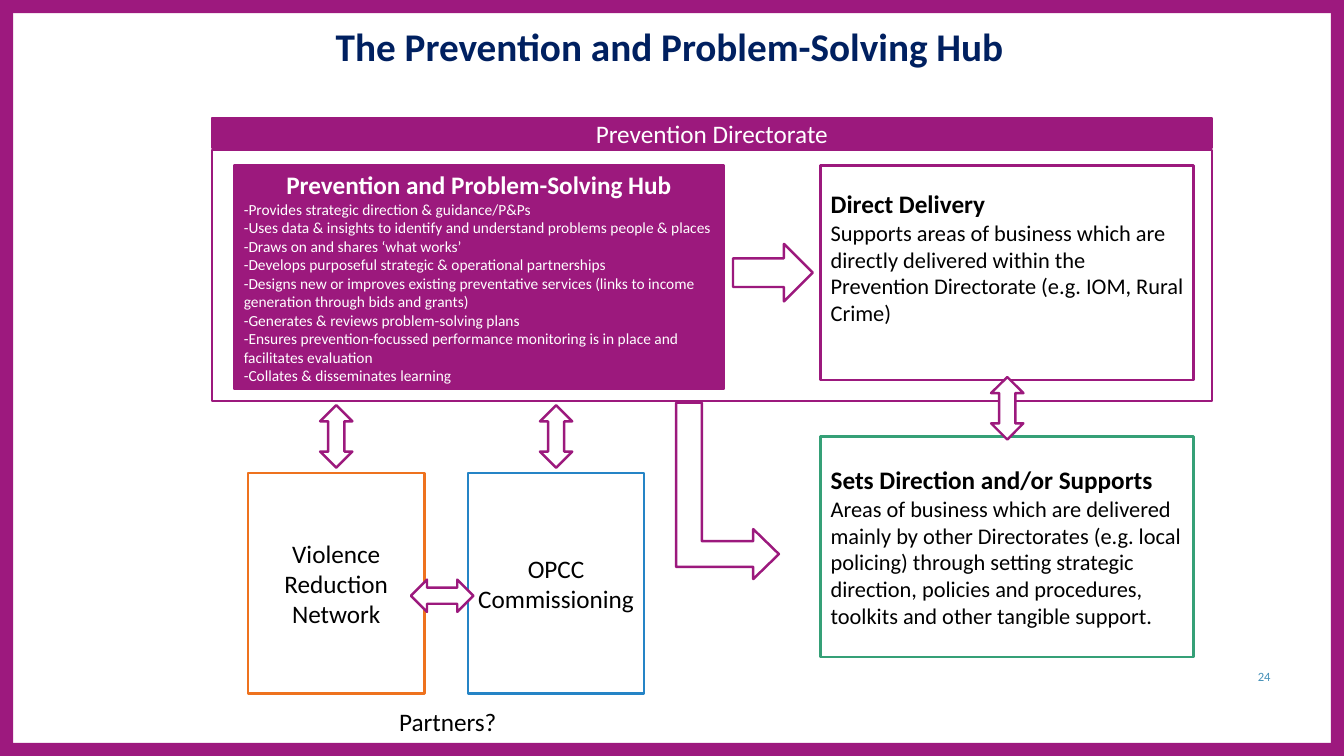
import pptx
import pptx.util
import pptx.dml.color
import pptx.enum.shapes
import pptx.enum.text

Inches = pptx.util.Inches
Pt = pptx.util.Pt
SHAPE = pptx.enum.shapes.MSO_SHAPE
ALIGN = pptx.enum.text.PP_ALIGN
ANCHOR = pptx.enum.text.MSO_ANCHOR

WIDE, HIGH = 13.33, 7.5
PURPLE, WHITE, BLACK = "9C197D", "FFFFFF", "000000"
NAVY, BLUE, TEAL = "002060", "2584C6", "35A077"
ORANGE, EDGE, PALE = "EE721E", "9D197E", "4590B8"

DUTIES = [
    "-Provides strategic direction & guidance/P&Ps",
    "-Uses data & insights to identify and understand problems people & places",
    "-Draws on and shares ‘what works’",
    "-Develops purposeful strategic & operational partnerships",
    "-Designs new or improves existing preventative services (links to income "
    "generation through bids and grants)",
    "-Generates & reviews problem-solving plans",
    "-Ensures prevention-focussed performance monitoring is in place and "
    "facilitates evaluation",
    "-Collates & disseminates learning",
]
DIRECT = ("Supports areas of business which are directly delivered within the "
          "Prevention Directorate (e.g. IOM, Rural Crime)")
SUPPORT = ("Areas of business which are delivered mainly by other Directorates "
           "(e.g. local policing) through setting strategic direction, policies "
           "and procedures, toolkits and other tangible support.")


def color(code):
    return pptx.dml.color.RGBColor.from_string(code)


def write(frame, lines, ink, anchor=ANCHOR.MIDDLE):
    """Fill a text frame; each line is (text, size, bold, alignment)."""
    frame.word_wrap = True
    frame.auto_size = pptx.enum.text.MSO_AUTO_SIZE.NONE
    frame.vertical_anchor = anchor
    for i, (text, size, bold, align) in enumerate(lines):
        para = frame.add_paragraph() if i else frame.paragraphs[0]
        para.alignment = align
        run = para.add_run()
        run.text = text
        run.font.name = "Calibri"
        run.font.size = Pt(size)
        run.font.bold = bold
        run.font.color.rgb = color(ink)


def draw(slide, kind, box, fill=WHITE, line=PURPLE, turn=0):
    """Add a preset shape; a fill or line of None is left out."""
    shape = slide.shapes.add_shape(kind, *map(Inches, box))
    shape.shadow.inherit = False
    shape.rotation = turn
    if fill:
        shape.fill.solid()
        shape.fill.fore_color.rgb = color(fill)
    else:
        shape.fill.background()
    if line:
        shape.line.color.rgb = color(line)
        shape.line.width = Pt(1.75)
    else:
        shape.line.fill.background()
    return shape


def panel(slide, box, lines, fill=WHITE, line=PURPLE, ink=BLACK):
    shape = draw(slide, SHAPE.RECTANGLE, box, fill, line)
    write(shape.text_frame, lines, ink)
    return shape


def label(slide, box, line, ink, anchor):
    text = slide.shapes.add_textbox(*map(Inches, box))
    write(text.text_frame, [line], ink, anchor)


def link(slide, x, y, turn=0, fill=WHITE):
    """Add a two-way arrow centred on a point."""
    wide, high = 0.62, 0.32
    box = (x - wide / 2, y - high / 2, wide, high)
    draw(slide, SHAPE.LEFT_RIGHT_ARROW, box, fill, turn=turn)


def border(slide, wide, high):
    thick = 0.13
    for box in [(0, 0, thick, high), (wide - thick, 0, thick, high),
                (0, 0, wide, thick), (0, high - thick, wide, thick)]:
        draw(slide, SHAPE.RECTANGLE, box, EDGE, None)


def heading(slide, box):
    title = slide.shapes.title
    title.left, title.top, title.width, title.height = map(Inches, box)
    line = ("The Prevention and Problem-Solving Hub", 28, True, ALIGN.LEFT)
    write(title.text_frame, [line], NAVY, ANCHOR.TOP)


def bureau(slide, x, y, wide, high):
    """Place the directorate: header bar, outline, hub and direct delivery."""
    panel(slide, (x, y, wide, 0.3),
          [("Prevention Directorate", 18, False, ALIGN.CENTER)],
          PURPLE, ink=WHITE)
    draw(slide, SHAPE.RECTANGLE, (x, y + 0.32, wide, high - 0.32), None)
    top = y + 0.47
    head = ("Prevention and Problem-Solving Hub", 18, True, ALIGN.CENTER)
    duties = [(duty, 11, False, ALIGN.LEFT) for duty in DUTIES]
    panel(slide, (x + 0.22, top, 4.86, 2.22), [head] + duties,
          PURPLE, ink=WHITE)
    draw(slide, SHAPE.RIGHT_ARROW, (x + 5.17, y + 1.25, 0.79, 0.57))
    direct = panel(slide, (x + 6.04, top, 3.7, 2.13),
                   [("Direct Delivery", 18, True, ALIGN.LEFT),
                    (DIRECT, 16, False, ALIGN.LEFT)])
    direct.text_frame.margin_bottom = Inches(0.35)


def support(slide, x, y, wide, high):
    """Place the supported areas with the arrows that lead to them."""
    panel(slide, (x, y, wide, high),
          [("Sets Direction and/or Supports", 18, True, ALIGN.LEFT),
           (SUPPORT, 16, False, ALIGN.LEFT)], line=TEAL)
    bend = draw(slide, SHAPE.BENT_UP_ARROW,
                (x - 1.8, y + 0.03, 1.75, 1.02), turn=90)
    bend.adjustments[1] = 0.243
    link(slide, x + wide / 2, y - 0.28, 90)


def partners(slide, x, y, wide, high):
    """Place two partner boxes, their arrows and the caption below."""
    card = 1.75
    step = wide - card
    names = [("Violence Reduction Network", ORANGE),
             ("OPCC Commissioning", BLUE)]
    for i, (name, line) in enumerate(names):
        left = x + i * step
        box = panel(slide, (left, y, card, high),
                    [(name, 18, False, ALIGN.CENTER)], line=line)
        box.text_frame.margin_left = Inches(0.08)
        box.text_frame.margin_right = Inches(0.08)
        link(slide, left + card / 2, y - 0.36, 90, None)
    link(slide, x + wide / 2 - 0.04, y + 1.22)
    label(slide, (x + 1.4, y + high + 0.08, 1.5, 0.4),
          ("Partners?", 18, False, ALIGN.LEFT), BLACK, ANCHOR.TOP)


def main():
    deck = pptx.Presentation()
    deck.slide_width, deck.slide_height = Inches(WIDE), Inches(HIGH)
    slide = deck.slides.add_slide(deck.slide_layouts[5])
    border(slide, WIDE, HIGH)
    heading(slide, (3.23, 0.17, 6.93, 0.57))
    bureau(slide, 2.1, 1.17, 9.92, 2.81)
    support(slide, 8.14, 4.33, 3.7, 2.19)
    partners(slide, 2.46, 4.69, 3.93, 2.19)
    label(slide, (11.55, 6.51, 1.15, 0.4),
          ("24", 9, False, ALIGN.RIGHT), PALE, ANCHOR.MIDDLE)
    deck.save("out.pptx")


if __name__ == "__main__":
    main()
